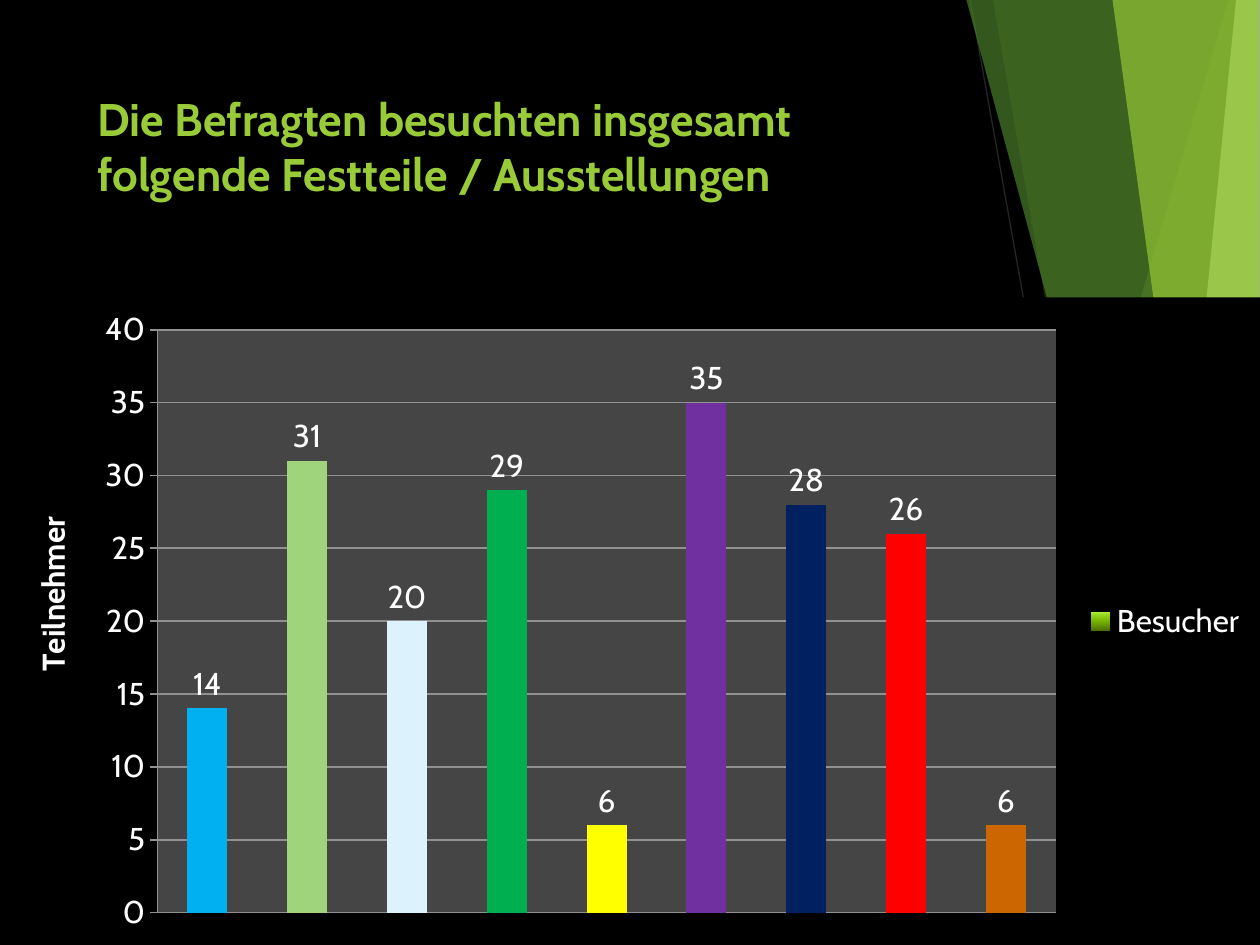
from typing import NamedTuple

from lxml.etree import SubElement
from pptx import Presentation
from pptx.chart.data import CategoryChartData
from pptx.dml.color import RGBColor
from pptx.enum.chart import XL_CHART_TYPE as ChartType
from pptx.enum.chart import XL_LABEL_POSITION as LabelPosition
from pptx.enum.chart import XL_LEGEND_POSITION as LegendPosition
from pptx.enum.chart import XL_TICK_MARK as TickMark
from pptx.enum.shapes import MSO_CONNECTOR as Connector
from pptx.enum.text import MSO_ANCHOR as Anchor
from pptx.enum.text import MSO_AUTO_SIZE as AutoSize
from pptx.enum.text import PP_ALIGN as Align
from pptx.oxml import parse_xml
from pptx.oxml.ns import nsdecls, qn
from pptx.util import Inches, Pt

FONT = "Cabin"
WIDTH, HEIGHT = 10, 7.5
COLORS = {
    "black": "000000", "white": "FFFFFF", "line": "262626",
    "lime": "99CB38", "green": "63A537", "forest": "4A7C29", "pale": "C2E088",
    "grid": "919191", "plot": "454545",
}
GRADIENT = {0: "4B7200", 50: "78B403", 70: "8AC914", 100: "A8F030"}


class Facet(NamedTuple):
    color: str
    opacity: int
    points: list[tuple[float, float]]


class Bar(NamedTuple):
    visitors: int
    color: str


RAYS = [((5.61, HEIGHT), (WIDTH, 4.57)), ((7.7, 0), (9.04, HEIGHT))]
FACETS = [
    Facet("lime", 85, [(0, 4.39), (0.49, HEIGHT), (0, HEIGHT)]),
    Facet("lime", 30, [(9.75, 0), (7.54, HEIGHT), (WIDTH, HEIGHT), (WIDTH, 0)]),
    Facet("lime", 20, [(7.88, 0), (9.19, HEIGHT), (WIDTH, HEIGHT), (WIDTH, 0)]),
    Facet("green", 72, [(7.26, HEIGHT), (WIDTH, 4.29), (WIDTH, HEIGHT)]),
    Facet("forest", 70, [(7.67, 0), (9.7, HEIGHT), (WIDTH, HEIGHT), (WIDTH, 0)]),
    Facet("pale", 70, [(9.81, 0), (9.07, HEIGHT), (WIDTH, HEIGHT), (WIDTH, 0)]),
    Facet("lime", 65, [(8.83, 0), (9.86, HEIGHT), (WIDTH, HEIGHT), (9.98, 0)]),
    Facet("lime", 80, [(8.81, HEIGHT), (WIDTH, 5.35), (WIDTH, HEIGHT)]),
]
BARS = [
    Bar(14, "00B0F0"), Bar(31, "9FD47D"), Bar(20, "DCF3FE"),
    Bar(29, "00B050"), Bar(6, "FFFF00"), Bar(35, "7030A0"),
    Bar(28, "002060"), Bar(26, "FF0000"), Bar(6, "CC6600"),
]


def rgb(name: str) -> RGBColor:
    return RGBColor.from_string(COLORS.get(name, name))


def set_font(font, *, size: float = 18, color: str = "white", bold: bool = False) -> None:
    font.name, font.size, font.bold = FONT, Pt(size), bold
    font.color.rgb = rgb(color)


def write_text(frame, text: str, **font_format) -> None:
    para = frame.paragraphs[0]
    span = para.add_run()
    span.text = text
    set_font(span.font, **font_format)


def draw_ray(page, start: tuple[float, float], end: tuple[float, float]) -> None:
    ray = page.shapes.add_connector(Connector.STRAIGHT, *map(Inches, start + end))
    ray.line.color.rgb = rgb("line")
    ray.line.width = Pt(0.75)
    SubElement(ray.element.spPr, qn("a:effectLst"))


def draw_facet(page, facet: Facet) -> None:
    first, *rest = [(Inches(x), Inches(y)) for x, y in facet.points]
    builder = page.shapes.build_freeform(*first)
    builder.add_line_segments(rest, close=True)
    shape = builder.convert_to_shape()
    shape.shadow.inherit = False
    shape.line.fill.background()
    shape.fill.solid()
    shape.fill.fore_color.rgb = rgb(facet.color)
    color = shape.element.spPr.find(".//" + qn("a:srgbClr"))
    SubElement(color, qn("a:alpha"), val=str(facet.opacity * 1000))


def area_fill(color: str):
    return parse_xml(
        f'<c:spPr {nsdecls("c", "a")}><a:solidFill><a:srgbClr val="{COLORS[color]}"/>'
        "</a:solidFill><a:ln><a:noFill/></a:ln></c:spPr>"
    )


def manual_layout(x: float, y: float, size: tuple[float, float] | None = None):
    values = [("xMode", "edge"), ("yMode", "edge"), ("x", x), ("y", y)]
    if size:
        values = [("layoutTarget", "inner"), *values, ("w", size[0]), ("h", size[1])]
    body = "".join(f'<c:{tag} val="{value}"/>' for tag, value in values)
    return parse_xml(
        f'<c:layout {nsdecls("c")}><c:manualLayout>{body}</c:manualLayout></c:layout>'
    )


def style_value_axis(axis) -> None:
    axis.minimum_scale, axis.maximum_scale, axis.major_unit = 0, 40, 5
    axis.major_tick_mark = TickMark.OUTSIDE
    axis.has_major_gridlines = True
    for line in (axis.format.line, axis.major_gridlines.format.line):
        line.color.rgb = rgb("grid")
        line.width = Pt(1)
    set_font(axis.tick_labels.font)
    frame = axis.axis_title.text_frame
    write_text(frame, "Teilnehmer", bold=True)
    title = axis.axis_title.element
    body = title.find(".//" + qn("a:bodyPr"))
    body.set("rot", "-5400000")
    body.set("vert", "horz")
    for old in title.findall(qn("c:layout")):
        title.remove(old)
    title.find(qn("c:tx")).addnext(manual_layout(0.02, 0.33))


def style_series(series) -> None:
    # Gradient shown by the legend key
    stops = "".join(
        f'<a:gs pos="{place * 1000}"><a:srgbClr val="{color}"/></a:gs>'
        for place, color in GRADIENT.items()
    )
    series.format.fill.background()
    empty = series.format.fill._xPr.find(qn("a:noFill"))
    empty.getparent().replace(empty, parse_xml(
        f'<a:gradFill {nsdecls("a")}><a:gsLst>{stops}</a:gsLst>'
        '<a:lin ang="16200000" scaled="0"/></a:gradFill>'
    ))
    # One colour for each bar
    for index, bar in enumerate(BARS):
        fill = series.points[index].format.fill
        fill.solid()
        fill.fore_color.rgb = rgb(bar.color)


def draw_chart(page) -> None:
    data = CategoryChartData()
    data.categories = [str(number) for number in range(1, len(BARS) + 1)]
    data.add_series("Besucher", [bar.visitors for bar in BARS])
    chart = page.shapes.add_chart(
        ChartType.COLUMN_CLUSTERED,
        Inches(0), Inches(2.36), Inches(WIDTH), Inches(5.14), data,
    ).chart
    chart.has_title = False
    set_font(chart.font)
    chart.category_axis.visible = False
    style_value_axis(chart.value_axis)

    # Columns and their values
    plot = chart.plots[0]
    plot.gap_width = 150
    plot.vary_by_categories = False
    style_series(plot.series[0])
    plot.has_data_labels = True
    labels = plot.data_labels
    labels.show_value = True
    labels.position = LabelPosition.OUTSIDE_END
    set_font(labels.font)

    # Legend
    chart.has_legend = True
    chart.legend.position = LegendPosition.RIGHT
    chart.legend.include_in_layout = False
    set_font(chart.legend.font)

    # Backgrounds and plot position
    space = chart.element
    space.find(qn("c:chart")).addnext(area_fill("black"))
    area = space.find(".//" + qn("c:plotArea"))
    for old in area.findall(qn("c:layout")):
        area.remove(old)
    area.insert(0, manual_layout(0.125, 0.05, (0.713, 0.9)))
    area.append(area_fill("plot"))


def draw_title(page) -> None:
    title = page.shapes.title
    title.left, title.top = Inches(0.67), Inches(0.67)
    title.width, title.height = Inches(6.94), Inches(1.44)
    frame = title.text_frame
    frame.word_wrap = True
    frame.auto_size = AutoSize.NONE
    frame.vertical_anchor = Anchor.TOP
    frame.paragraphs[0].alignment = Align.LEFT
    write_text(
        frame, "Die Befragten besuchten insgesamt folgende Festteile / Ausstellungen",
        size=26.1, color="lime", bold=True,
    )


def main() -> None:
    deck = Presentation()
    deck.slide_width, deck.slide_height = Inches(WIDTH), Inches(HEIGHT)
    page = deck.slides.add_slide(deck.slide_layouts[5])
    page.background.fill.solid()
    page.background.fill.fore_color.rgb = rgb("black")
    for start, end in RAYS:
        draw_ray(page, start, end)
    for facet in FACETS:
        draw_facet(page, facet)
    draw_title(page)
    draw_chart(page)
    deck.save("out.pptx")


if __name__ == "__main__":
    main()
